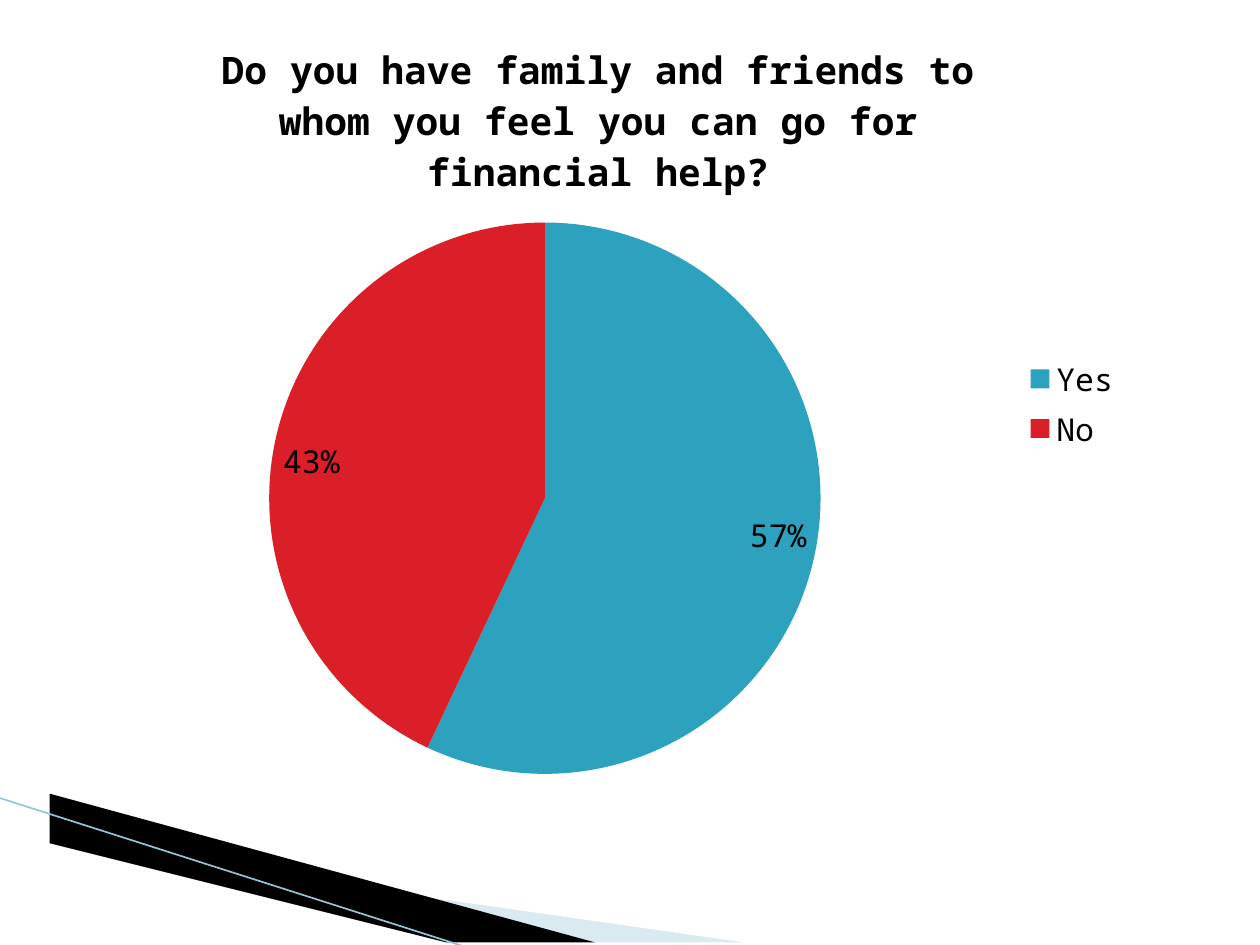
from dataclasses import dataclass

from lxml import etree
from pptx import Presentation
from pptx.chart.data import CategoryChartData
from pptx.dml.color import RGBColor
from pptx.enum.chart import XL_CHART_TYPE, XL_LABEL_POSITION, XL_LEGEND_POSITION
from pptx.oxml import parse_xml
from pptx.oxml.ns import nsdecls, qn
from pptx.util import Cm, Pt

PIE = XL_CHART_TYPE.PIE
INSIDE_END = XL_LABEL_POSITION.INSIDE_END
RIGHT = XL_LEGEND_POSITION.RIGHT

BLACK = RGBColor(0x00, 0x00, 0x00)
PALE_BLUE = RGBColor(0xA0, 0xCB, 0xDC)
LINE_BLUE = RGBColor(0x97, 0xC5, 0xD8)
TEAL = RGBColor(0x2D, 0xA2, 0xBF)
RED = RGBColor(0xDA, 0x1F, 0x28)
FONT = "Noto Sans Mono"
QUESTION = "Do you have family and friends to whom you feel you can go for financial help?"


@dataclass
class Wedge:
    points: list[tuple[float, float]]
    color: RGBColor
    opacity: int = 100


@dataclass
class Answer:
    label: str
    value: int
    color: RGBColor


WEDGES = [
    Wedge([(1.4, 16.54), (15.11, 19.08), (11.58, 19.08), (1.4, 16.51)], PALE_BLUE, 40),
    Wedge([(1.35, 16.48), (11.61, 19.08), (9.45, 19.1), (1.37, 16.51)], BLACK),
]
ANSWERS = [Answer("Yes", 57, TEAL), Answer("No", 43, RED)]


def draw_wedge(s, wedge: Wedge) -> None:
    start, *rest = wedge.points
    builder = s.shapes.build_freeform(*start, scale=Cm(1))
    builder.add_line_segments(rest)
    sp = builder.convert_to_shape()
    sp.shadow.inherit = False
    sp.fill.solid()
    sp.fill.fore_color.rgb = wedge.color
    sp.line.fill.background()
    if wedge.opacity < 100:
        color = sp.fill._xPr.find(qn("a:solidFill"))[0]
        etree.SubElement(color, qn("a:alpha"), val=str(wedge.opacity * 1000))


def draw_edge(s) -> None:
    line = s.shapes.add_connector(1, Cm(-0.03), Cm(16.08), Cm(9.42), Cm(19.1))
    line.line.color.rgb = LINE_BLUE
    line.line.width = Pt(0.95)
    etree.SubElement(line._element.spPr, qn("a:effectLst"))


def place_plot(chart, x: float, y: float, w: float, h: float) -> None:
    area = chart._chartSpace.chart.plotArea
    for old in area.findall(qn("c:layout")):
        area.remove(old)
    area.insert(0, parse_xml(
        f'<c:layout {nsdecls("c")}><c:manualLayout><c:layoutTarget val="inner"/>'
        '<c:xMode val="edge"/><c:yMode val="edge"/>'
        f'<c:x val="{x}"/><c:y val="{y}"/><c:w val="{w}"/><c:h val="{h}"/>'
        '</c:manualLayout></c:layout>'))


def draw_pie(s, answers: list[Answer]) -> None:
    data = CategoryChartData()
    data.categories = [a.label for a in answers]
    data.add_series("Series 1", [a.value for a in answers])
    chart = s.shapes.add_chart(PIE, Cm(1.27), Cm(0.2), Cm(21.59), Cm(15.88), data).chart
    chart.font.name = FONT
    chart.font.size = Pt(18)
    chart.font.color.rgb = BLACK

    chart.has_title = True
    chart.chart_title.include_in_layout = False
    p = chart.chart_title.text_frame.paragraphs[0]
    p.text = QUESTION
    p.font.name = FONT
    p.font.size = Pt(21.6)
    p.font.bold = True
    p.font.color.rgb = BLACK

    chart.has_legend = True
    chart.legend.position = RIGHT
    chart.legend.include_in_layout = False

    plot = chart.plots[0]
    plot.vary_by_categories = True
    plot.has_data_labels = True
    labels = plot.data_labels
    labels.show_value = False
    labels.show_percentage = True
    labels.number_format = "0%"
    labels.number_format_is_linked = False
    labels.position = INSIDE_END
    for i, answer in enumerate(answers):
        fill = plot.series[0].points[i].format.fill
        fill.solid()
        fill.fore_color.rgb = answer.color
    place_plot(chart, 0.19, 0.27, 0.52, 0.7)


def main() -> None:
    prs = Presentation()
    prs.slide_width, prs.slide_height = Cm(25.4), Cm(19.05)
    s = prs.slides.add_slide(prs.slide_layouts[6])
    for wedge in WEDGES:
        draw_wedge(s, wedge)
    draw_edge(s)
    draw_pie(s, ANSWERS)
    prs.save("out.pptx")


if __name__ == "__main__":
    main()
